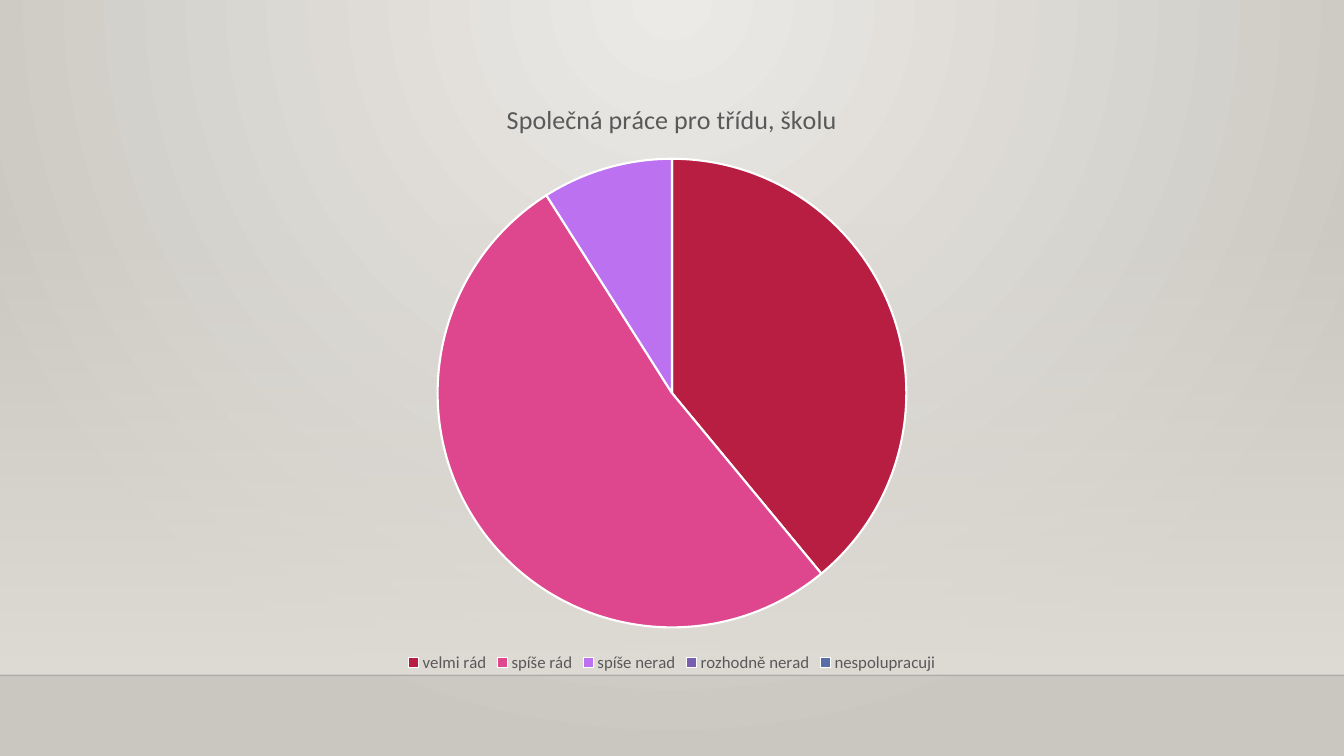
"""Builds a slide with a pie chart on a softly lit background."""
from typing import NamedTuple

from lxml.etree import SubElement
from pptx import Presentation
from pptx.chart.data import CategoryChartData
from pptx.dml.color import RGBColor
from pptx.enum.chart import XL_CHART_TYPE, XL_LEGEND_POSITION
from pptx.enum.shapes import MSO_CONNECTOR, MSO_SHAPE
from pptx.oxml import parse_xml
from pptx.oxml.ns import nsdecls, qn
from pptx.util import Inches, Pt

WIDE, HIGH = Inches(13.33), Inches(7.5)
FLOOR = 6.7 / 7.5
WALL = 2.21 / 7.5
TITLE = "Společná práce pro třídu, školu"
GREY = "595959"


class Slice(NamedTuple):
    label: str
    value: int | None
    color: str


class Stop(NamedTuple):
    pos: int
    color: str
    alpha: int = 100


SLICES = [
    Slice("velmi rád", 39, "B71E42"),
    Slice("spíše rád", 52, "DE478E"),
    Slice("spíše nerad", 9, "BC72F0"),
    Slice("rozhodně nerad", 0, "795FAF"),
    Slice("nespolupracuji", None, "586EA6"),
]
GLOW = '<a:path path="circle"><a:fillToRect l="43000" r="43000" b="100000"/></a:path>'
DOWN = '<a:lin ang="5400000" scaled="0"/>'


def paint(target, color: str) -> None:
    target.rgb = RGBColor.from_string(color)


def share(x: float, y: float) -> tuple[int, int]:
    return round(WIDE * x), round(HIGH * y)


def blend(fill, root, stops: list[Stop], course: str) -> None:
    fill.solid()
    marks = "".join(
        f'<a:gs pos="{s.pos * 1000}"><a:srgbClr val="{s.color}">'
        f'<a:alpha val="{s.alpha * 1000}"/></a:srgbClr></a:gs>'
        for s in stops
    )
    old = root.find(".//" + qn("a:solidFill"))
    new = parse_xml(
        f'<a:gradFill {nsdecls("a")} rotWithShape="1">'
        f"<a:gsLst>{marks}</a:gsLst>{course}</a:gradFill>"
    )
    old.getparent().replace(old, new)


def style(font, size: float, color: str) -> None:
    font.name, font.size, font.bold = "Calibri", Pt(size), False
    paint(font.color, color)


def draw_room(slide) -> None:
    blend(slide.background.fill, slide.element,
          [Stop(0, "ECEAE7"), Stop(100, "CAC7C1")], GLOW)
    wall = slide.shapes.add_shape(
        MSO_SHAPE.RECTANGLE, *share(0, WALL), *share(1, FLOOR - WALL))
    wall.shadow.inherit = False
    wall.line.fill.background()
    blend(wall.fill, wall.element,
          [Stop(0, "DFDBD5", 0), Stop(100, "DFDBD5")], DOWN)
    edge = slide.shapes.add_connector(
        MSO_CONNECTOR.STRAIGHT, *share(0, FLOOR), *share(1, FLOOR))
    edge.line.width = Pt(1)
    paint(edge.line.color, "000001")
    tint = edge.element.spPr.find(".//" + qn("a:srgbClr"))
    SubElement(tint, qn("a:alpha")).set("val", "20000")
    SubElement(edge.element.spPr, qn("a:effectLst"))


def draw_pie(slide) -> None:
    data = CategoryChartData()
    data.categories = [s.label for s in SLICES]
    data.add_series(TITLE, [s.value for s in SLICES])
    chart = slide.shapes.add_chart(
        XL_CHART_TYPE.PIE, *share(1 / 6, 0.105), *share(2 / 3, 0.79), data).chart
    style(chart.font, 10, "000000")
    chart.has_title = True
    head = chart.chart_title.text_frame
    head.text = TITLE
    style(head.paragraphs[0].font, 18.6, GREY)
    chart.chart_title.include_in_layout = False
    chart.has_legend = True
    chart.legend.position = XL_LEGEND_POSITION.BOTTOM
    chart.legend.include_in_layout = False
    style(chart.legend.font, 12, GREY)
    plot = chart.plots[0]
    plot.vary_by_categories = True
    for i, part in enumerate(SLICES):
        form = plot.series[0].points[i].format
        form.fill.solid()
        paint(form.fill.fore_color, part.color)
        form.line.width = Pt(1.5)
        paint(form.line.color, "FFFFFF")


def main() -> None:
    deck = Presentation()
    deck.slide_width, deck.slide_height = WIDE, HIGH
    slide = deck.slides.add_slide(deck.slide_layouts[6])
    draw_room(slide)
    draw_pie(slide)
    deck.save("out.pptx")


if __name__ == "__main__":
    main()
